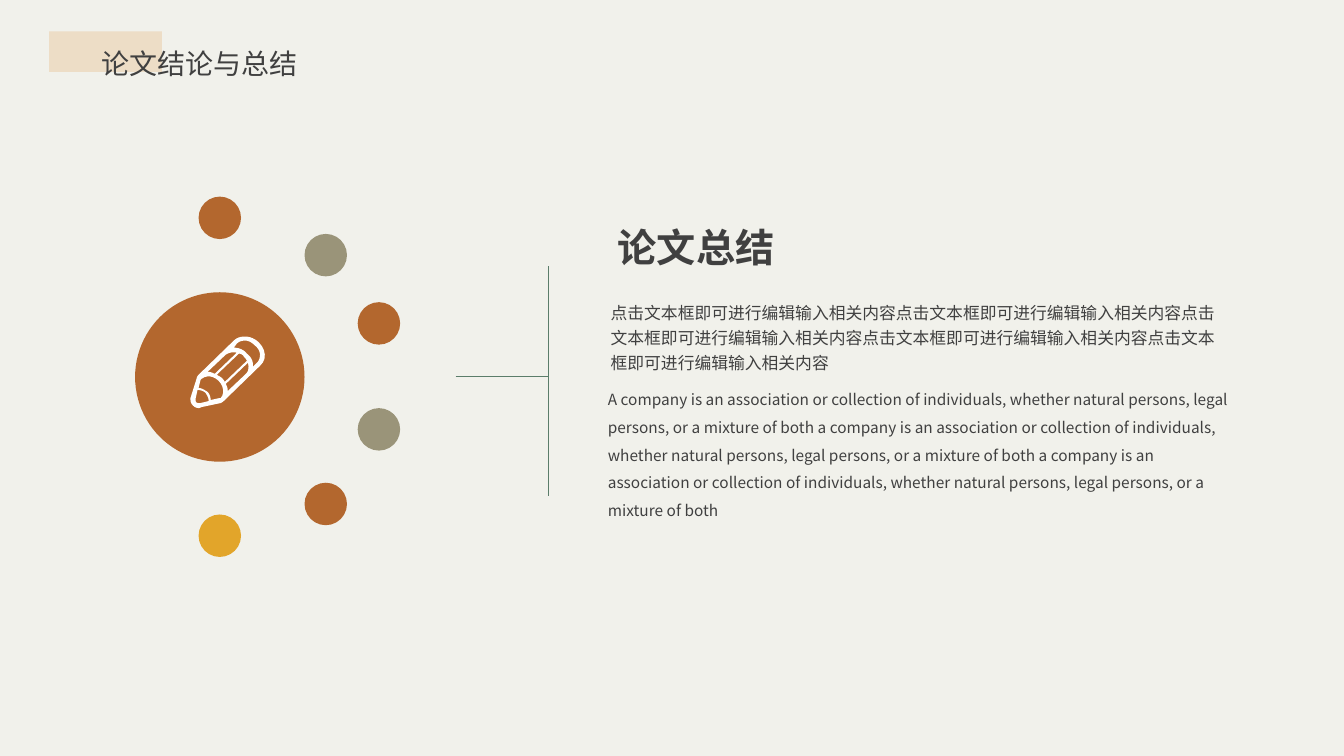
from lxml import etree
from pptx import Presentation
from pptx.dml.color import RGBColor
from pptx.enum import shapes, text
from pptx.oxml import ns
from pptx.util import Cm, Pt

FONT = "Noto Sans CJK SC"
COLORS = {"paper": "F1F1EB", "sand": "EDDDC6", "ink": "404040", "rust": "B3672E",
          "olive": "9A9479", "gold": "E2A52A", "green": "5B7D6A", "white": "FFFFFF"}
DOTS = [(0, -4.01, "rust"), (2.67, -3.07, "olive"), (4.01, -1.35, "rust"),
        (4.01, 1.32, "olive"), (2.67, 3.2, "rust"), (0, 4, "gold")]
PENCIL = [
    [(68, 6), (64, 2, 59, 0, 54, 0), (50, 0, 46, 1, 43, 4), (8, 38), (7, 39, 6, 41, 6, 42),
     (0, 61), (0, 61, 0, 62, 0, 63), (0, 67, 4, 71, 8, 71), (9, 71, 11, 70, 11, 70), (30, 66),
     (32, 65, 33, 64, 34, 63), (69, 29), (76, 23, 75, 13, 68, 6)],
    [(66, 26), (62, 30), (62, 29, 62, 29, 62, 28), (62, 24, 60, 20, 56, 17),
     (53, 13, 48, 11, 43, 11), (46, 7), (48, 5, 51, 4, 54, 4), (58, 4, 61, 6, 64, 9),
     (67, 11, 69, 15, 69, 18), (69, 21, 68, 24, 66, 26)],
    [(20, 63), (20, 60, 19, 57, 17, 55), (14, 53, 11, 51, 8, 51), (10, 43),
     (10, 43, 11, 42, 11, 42), (16, 38, 23, 39, 28, 44), (33, 49, 34, 57, 30, 61), (29, 61)],
    [(10, 66), (8, 66), (6, 66, 5, 65, 5, 63), (5, 62), (7, 53),
     (10, 53, 13, 54, 15, 56), (17, 59, 18, 61, 18, 64)],
    [(24, 37), (22, 36, 20, 35, 17, 35), (35, 18), (38, 16, 42, 15, 46, 16)],
    [(34, 45), (33, 43, 32, 42, 31, 41), (30, 40, 28, 39, 26, 38), (48, 17),
     (50, 17, 52, 18, 53, 20), (54, 21, 55, 22, 56, 24)],
    [(37, 54), (37, 51, 36, 49, 35, 47), (57, 26), (58, 30, 58, 34, 55, 37)],
]
CHINESE = "点击文本框即可进行编辑输入相关内容" * 5
CLAUSE = "company is an association or collection of individuals, whether natural persons, " \
         "legal persons, or a mixture of both"
ENGLISH = "A " + " a ".join([CLAUSE] * 3)


def rgb(name):
    """Return the named colour."""
    return RGBColor.from_string(COLORS[name])


def paint(shape, color):
    """Give a shape a flat fill without line or shadow."""
    shape.shadow.inherit = False
    shape.fill.solid()
    shape.fill.fore_color.rgb = rgb(color)
    shape.line.fill.background()
    return shape


def write(box, words, size, spacing=1.0, bold=False, inset=(0.25, 0.13)):
    """Fill a text holder with one styled paragraph."""
    frame = box.text_frame
    frame.text = words
    frame.word_wrap = True
    frame.auto_size = text.MSO_AUTO_SIZE.NONE
    frame.vertical_anchor = text.MSO_ANCHOR.TOP
    frame.margin_left = frame.margin_right = Cm(inset[0])
    frame.margin_top = frame.margin_bottom = Cm(inset[1])
    para = frame.paragraphs[0]
    para.alignment = text.PP_ALIGN.LEFT
    para.line_spacing = spacing
    para.space_before = Pt(0)
    font = para.runs[0].font
    font.name, font.size, font.bold = FONT, Pt(size), bold
    font.color.rgb = rgb("ink")
    etree.SubElement(font._element, ns.qn("a:ea"), typeface=FONT)


def heading(page, left, top):
    """Place the slide title over its sand-coloured tab."""
    tab = page.shapes.add_shape(shapes.MSO_SHAPE.RECTANGLE, Cm(left), Cm(top), Cm(2.84), Cm(1.02))
    page.shapes._spTree.insert(2, paint(tab, "sand")._element)
    title = page.shapes.title
    title.left, title.top = Cm(left + 1.07), Cm(top - 0.18)
    title.width, title.height = Cm(8.89), Cm(1.4)
    write(title, "论文结论与总结", 20, spacing=1.5)


def flatten(contour, steps=6):
    """Turn a contour of lines and cubic curves into points in thousandths of a cm."""
    points = [contour[0]]
    for part in contour[1:]:
        if len(part) == 2:
            points.append(part)
            continue
        start, first, second, end = points[-1], part[:2], part[2:4], part[4:]
        for step in range(1, steps + 1):
            t = step / steps
            s = 1 - t
            points.append(tuple(s**3 * a + 3 * s * s * t * b + 3 * s * t * t * c + t**3 * d
                                for a, b, c, d in zip(start, first, second, end)))
    return [(x * 25.4, y * 25.4) for x, y in points]


def pencil(page, left, top):
    """Draw the pencil icon as one outline with openings."""
    outlines = [flatten(contour) for contour in PENCIL]
    builder = page.shapes.build_freeform(*outlines[0][0], scale=Cm(0.001))
    builder.add_line_segments(outlines[0][1:])
    for outline in outlines[1:]:
        builder.move_to(*outline[0])
        builder.add_line_segments(outline[1:])
    paint(builder.convert_to_shape(Cm(left), Cm(top)), "white")


def disc(page, x, y, size, color):
    """Draw a circle around a centre."""
    circle = page.shapes.add_shape(shapes.MSO_SHAPE.OVAL, Cm(x - size / 2), Cm(y - size / 2),
                                   Cm(size), Cm(size))
    paint(circle, color)


def medallion(page, x, y):
    """Draw the large disc, its satellites and the pencil."""
    disc(page, x, y, 4.27, "rust")
    for across, down, color in DOTS:
        disc(page, x + across, y + down, 1.07, color)
    pencil(page, x - 0.74, y - 1.02)


def bracket(page, left, top, width, height):
    """Draw the thin stem and upright before the text."""
    right, middle = left + width, top + height * 0.48
    for ends in [(left, middle, right, middle), (right, top, right, top + height)]:
        line = page.shapes.add_connector(shapes.MSO_CONNECTOR.STRAIGHT, *map(Cm, ends))
        line.line.color.rgb = rgb("green")
        line.line.width = Pt(0.5)
        etree.SubElement(line._element.spPr, ns.qn("a:effectLst"))


def summary(page, left, top):
    """Place the subheading and both paragraphs."""
    def block(across, down, width, height, *args, **style):
        """Add one text box relative to the region."""
        box = page.shapes.add_textbox(Cm(left + across), Cm(top + down), Cm(width), Cm(height))
        write(box, *args, **style)

    block(0.18, 0, 6.1, 1.45, "论文总结", 28, bold=True)
    block(0, 1.86, 15.77, 2.18, CHINESE, 12, spacing=1.25)
    block(0.18, 4.09, 15.7, 2.46, ENGLISH, 11, spacing=1.5, inset=(0, 0))


def main():
    """Build and save the deck."""
    deck = Presentation()
    deck.slide_width, deck.slide_height = Cm(33.87), Cm(19.05)
    page = deck.slides.add_slide(deck.slide_layouts.get_by_name("Title Only"))
    page.background.fill.solid()
    page.background.fill.fore_color.rgb = rgb("paper")
    heading(page, 1.24, 0.79)
    medallion(page, 5.54, 9.5)
    bracket(page, 11.48, 6.71, 2.34, 5.79)
    summary(page, 15.14, 5.51)
    deck.save("out.pptx")


if __name__ == "__main__":
    main()
